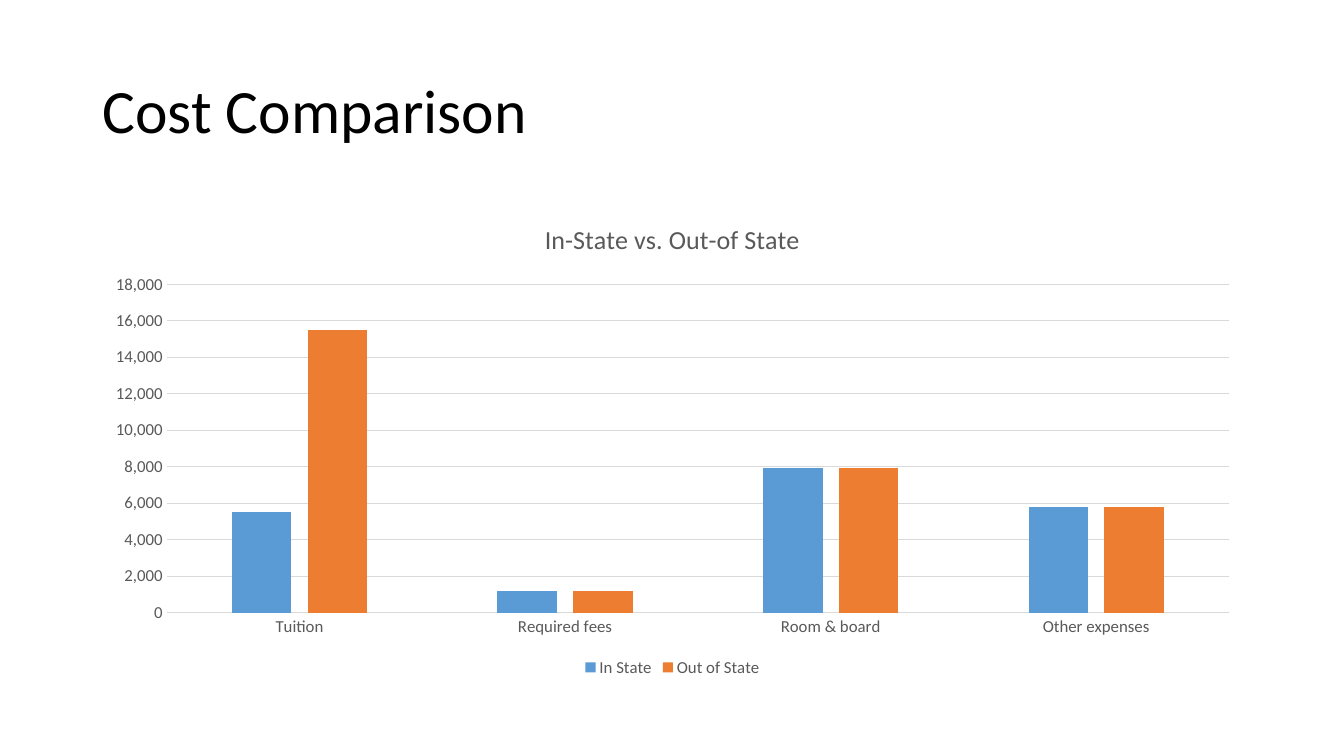
from pptx import Presentation
from pptx.chart.data import CategoryChartData
from pptx.dml.color import RGBColor
from pptx.enum import chart as charts, text
from pptx.util import Inches, Pt

FONT = "Calibri"
BLACK = RGBColor(0x00, 0x00, 0x00)
GREY = RGBColor(0x59, 0x59, 0x59)
LINE_GREY = RGBColor(0xD9, 0xD9, 0xD9)
BLUE = RGBColor(0x5B, 0x9B, 0xD5)
ORANGE = RGBColor(0xED, 0x7D, 0x31)

CATEGORIES = ["Tuition", "Required fees", "Room & board", "Other expenses"]
COSTS = [
    ("In State", [5500, 1200, 7900, 5800], BLUE),
    ("Out of State", [15500, 1200, 7900, 5800], ORANGE),
]


def style_font(font, size, color):
    font.name = FONT
    font.size = Pt(size)
    font.bold = False
    font.color.rgb = color


def style_line(line):
    line.color.rgb = LINE_GREY
    line.width = Pt(0.75)


def add_title(slide, title):
    box = slide.shapes.add_textbox(Inches(0.92), Inches(0.4), Inches(11.5), Inches(1.45))
    frame = box.text_frame
    frame.word_wrap = True
    frame.vertical_anchor = text.MSO_ANCHOR.MIDDLE
    frame.text = title
    paragraph = frame.paragraphs[0]
    paragraph.line_spacing = 0.9
    style_font(paragraph.runs[0].font, 44, BLACK)


def style_axes(chart):
    for axis in (chart.category_axis, chart.value_axis):
        axis.major_tick_mark = charts.XL_TICK_MARK.NONE
        axis.minor_tick_mark = charts.XL_TICK_MARK.NONE
        style_font(axis.tick_labels.font, 12, GREY)
    style_line(chart.category_axis.format.line)
    values = chart.value_axis
    values.format.line.fill.background()
    values.minimum_scale, values.maximum_scale = 0, 18000
    values.major_unit = 2000
    values.tick_labels.number_format = "#,##0"
    values.tick_labels.number_format_is_linked = False
    style_line(values.major_gridlines.format.line)


def add_cost_chart(slide, title):
    data = CategoryChartData(number_format="#,##0")
    data.categories = CATEGORIES
    for name, values, _ in COSTS:
        data.add_series(name, values)
    chart = slide.shapes.add_chart(
        charts.XL_CHART_TYPE.COLUMN_CLUSTERED,
        Inches(0.92), Inches(2), Inches(11.5), Inches(4.76), data,
    ).chart
    style_font(chart.font, 10, BLACK)

    chart.has_title = True
    chart.chart_title.include_in_layout = False
    frame = chart.chart_title.text_frame
    frame.text = title
    style_font(frame.paragraphs[0].runs[0].font, 18.6, GREY)

    chart.has_legend = True
    chart.legend.position = charts.XL_LEGEND_POSITION.BOTTOM
    chart.legend.include_in_layout = False
    style_font(chart.legend.font, 12, GREY)

    style_axes(chart)
    plot = chart.plots[0]
    plot.gap_width, plot.overlap = 219, -27
    plot.vary_by_categories = False
    for series, (_, _, color) in zip(plot.series, COSTS):
        series.format.fill.solid()
        series.format.fill.fore_color.rgb = color
        series.invert_if_negative = False


def main():
    """Build the cost comparison slide."""
    presentation = Presentation()
    presentation.slide_width = Inches(13.33)
    presentation.slide_height = Inches(7.5)
    slide = presentation.slides.add_slide(presentation.slide_layouts[6])
    add_title(slide, "Cost Comparison")
    add_cost_chart(slide, "In-State vs. Out-of State")
    presentation.save("out.pptx")


if __name__ == "__main__":
    main()
